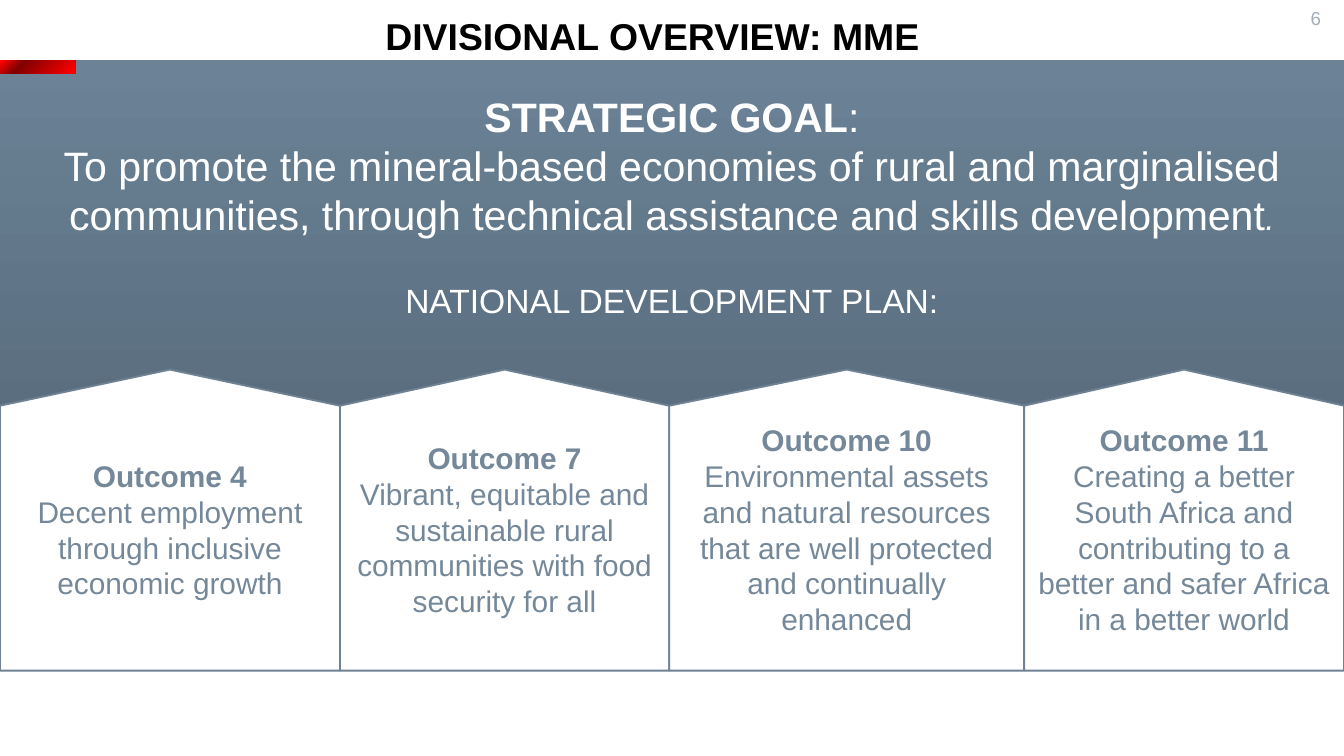
"""Build the divisional overview slide with its strategic goal and four outcomes."""
from pptx import Presentation
from pptx.dml.color import RGBColor
from pptx.enum.shapes import MSO_SHAPE
from pptx.enum.text import MSO_ANCHOR, PP_ALIGN
from pptx.oxml import parse_xml
from pptx.oxml.ns import nsdecls, qn
from pptx.util import Inches, Pt

RECT, PENTAGON = MSO_SHAPE.RECTANGLE, MSO_SHAPE.PENTAGON
TOP, MIDDLE = MSO_ANCHOR.TOP, MSO_ANCHOR.MIDDLE
CENTER = PP_ALIGN.CENTER
FONT = "Arial"
WIDTH = 10
HEIGHT = WIDTH * 9 / 16
COLORS = {
    "white": "FFFFFF", "black": "000000", "number": "A3ADB7",
    "border": "6E8294", "outcome": "758899",
}
SLATE = [(0, "3F4D59"), (50, "5A6E7F"), (100, "6B8297")]
RED = [(3, "FF0000"), (37, "C00000"), (71, "800000"), (98, "FF0000")]
UPWARD = '<a:lin ang="16200000" scaled="0"/>'
FROM_CORNER = '<a:path path="circle"><a:fillToRect l="100000" t="100000"/></a:path>'

OUTCOMES = [
    (2.53, "Outcome 4", "Decent employment through inclusive economic growth"),
    (2.45, "Outcome 7", "Vibrant, equitable and sustainable rural communities "
                        "with food security for all"),
    (2.64, "Outcome 10", "Environmental assets and natural resources that are "
                         "well protected and continually enhanced"),
    (2.38, "Outcome 11", "Creating a better South Africa and contributing to a "
                         "better and safer Africa in a better world"),
]
OUTCOME_TOP, OUTCOME_HEIGHT = 2.75, 2.24


class SlideBuilder:
    """Hold the style and the current slide."""

    def __init__(self, slide):
        self.slide = slide

    def color(self, name):
        """Return a named colour."""
        return RGBColor.from_string(COLORS[name])

    def shape(self, kind, x, y, w, h, fill=None):
        """Add a shape without line or shadow."""
        sp = self.slide.shapes.add_shape(kind, Inches(x), Inches(y), Inches(w), Inches(h))
        sp.shadow.inherit = False
        sp.line.fill.background()
        if fill:
            sp.fill.solid()
            sp.fill.fore_color.rgb = self.color(fill)
        return sp

    def gradient(self, x, y, w, h, stops, direction):
        """Add a rectangle with a gradient fill."""
        sp = self.shape(RECT, x, y, w, h)
        sp.fill.background()
        gs = "".join(f'<a:gs pos="{pos * 1000}"><a:srgbClr val="{rgb}"/></a:gs>'
                     for pos, rgb in stops)
        fill = parse_xml(f'<a:gradFill {nsdecls("a")} rotWithShape="1">'
                         f'<a:gsLst>{gs}</a:gsLst>{direction}</a:gradFill>')
        spPr = sp.element.spPr
        spPr.replace(spPr.find(qn("a:noFill")), fill)

    def paragraph(self, tf, text, size, color, bold=False, first=False):
        """Fill the first paragraph of a frame or append another one."""
        p = tf.paragraphs[0] if first else tf.add_paragraph()
        p.alignment = CENTER
        p.font.name, p.font.size, p.font.bold = FONT, Pt(size), bold
        p.font.color.rgb = self.color(color)
        p.add_run().text = text
        return p

    def text_box(self, x, y, w, h, anchor=TOP, inset=0.05):
        """Add a wrapping text box and return its frame."""
        box = self.slide.shapes.add_textbox(Inches(x), Inches(y), Inches(w), Inches(h))
        tf = box.text_frame
        tf.word_wrap = True
        tf.vertical_anchor = anchor
        tf.margin_top = tf.margin_bottom = Inches(inset)
        return tf

    def outcome(self, x, width, heading, text):
        """Add an upward pentagon with upright text."""
        turn = (width - OUTCOME_HEIGHT) / 2
        sp = self.shape(PENTAGON, x + turn, OUTCOME_TOP - turn,
                        OUTCOME_HEIGHT, width, "white")
        sp.rotation = 270
        sp.adjustments[0] = 0.12
        sp.line.color.rgb = self.color("border")
        sp.line.width = Pt(1)
        tf = sp.text_frame
        tf.word_wrap = True
        tf.vertical_anchor = MIDDLE
        sp.element.txBody.find(qn("a:bodyPr")).set("vert", "vert")
        self.paragraph(tf, heading, 16, "outcome", bold=True, first=True)
        self.paragraph(tf, text, 16, "outcome")


def main():
    """Build and save the slide."""
    prs = Presentation()
    prs.slide_width, prs.slide_height = Inches(WIDTH), Inches(HEIGHT)
    s = SlideBuilder(prs.slides.add_slide(prs.slide_layouts[6]))

    s.gradient(0, 0.45, WIDTH, HEIGHT - 0.45, SLATE, UPWARD)
    s.gradient(0, 0.45, 0.56, 0.1, RED, FROM_CORNER)
    s.shape(RECT, 0, 4.99, WIDTH, HEIGHT - 4.99, "white")

    title = s.text_box(0.13, 0, 9.45, 0.44, inset=0.1)
    s.paragraph(title, "DIVISIONAL OVERVIEW: MME", 20, "black", bold=True, first=True)
    number = s.text_box(9.58, 0, 0.42, 0.27, anchor=MIDDLE)
    s.paragraph(number, "6", 10, "number", first=True)

    goal = s.text_box(0.28, 0.63, 9.44, 4.17)
    p = s.paragraph(goal, "STRATEGIC GOAL", 22, "white", bold=True, first=True)
    r = p.add_run()
    r.text = ":"
    r.font.bold = False
    p = s.paragraph(goal, "To promote the mineral-based economies of rural and "
                    "marginalised communities, through technical assistance and "
                    "skills development", 22, "white")
    r = p.add_run()
    r.text = "."
    r.font.size, r.font.italic = Pt(18), True
    p = s.paragraph(goal, "NATIONAL DEVELOPMENT PLAN:", 18, "white")
    p.space_before = Pt(22)

    x = 0
    for width, heading, text in OUTCOMES:
        s.outcome(x, width, heading, text)
        x += width

    prs.save("out.pptx")


if __name__ == "__main__":
    main()
